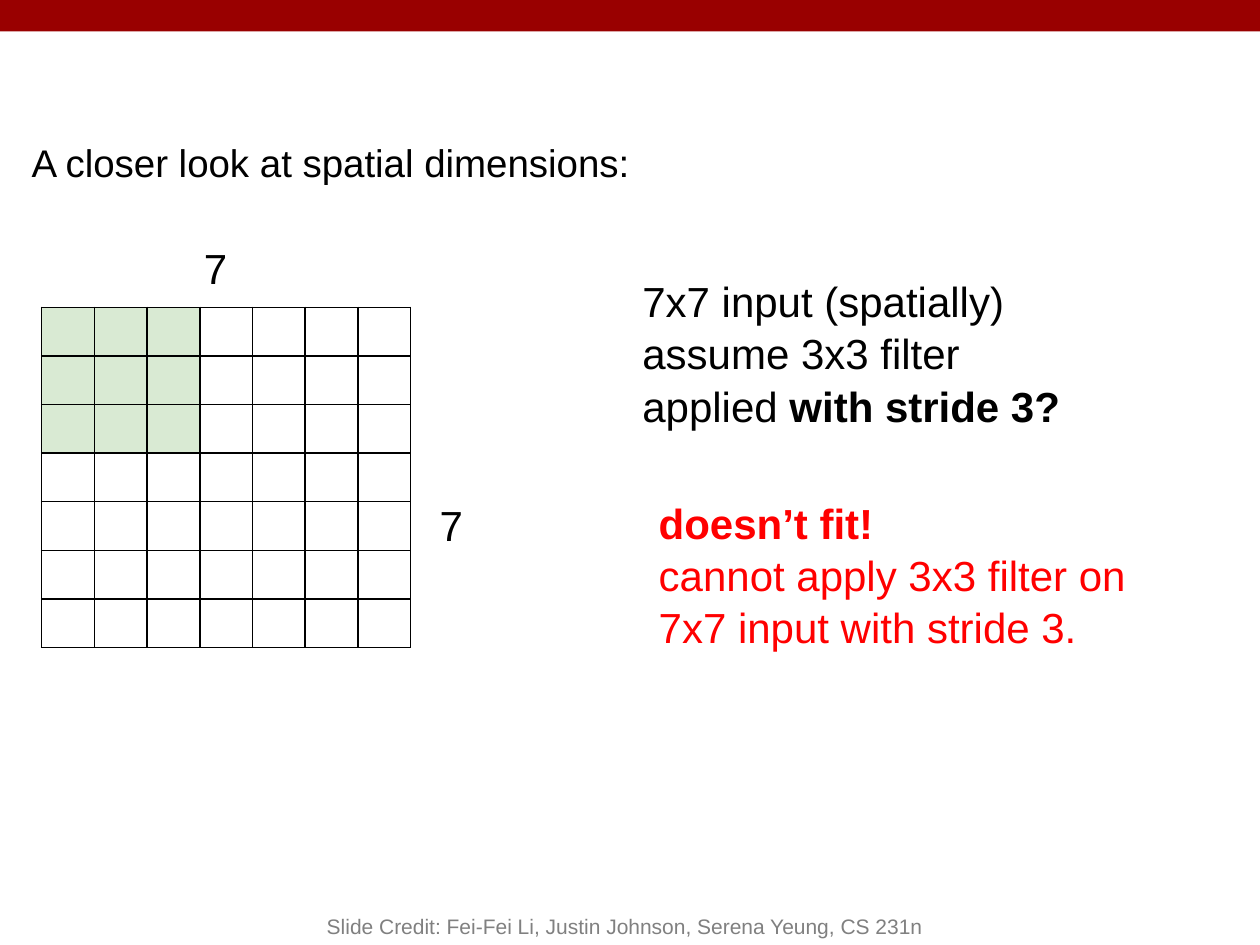
import pptx
import pptx.util
import pptx.oxml
from pptx.dml.color import RGBColor
from pptx.enum.shapes import MSO_SHAPE
from pptx.enum.text import MSO_ANCHOR, MSO_AUTO_SIZE, PP_ALIGN
from pptx.oxml.ns import nsdecls
from pptx.util import Inches, Pt

BLACK = RGBColor(0, 0, 0)
WHITE = RGBColor(255, 255, 255)
RED = RGBColor(255, 0, 0)
GRAY = RGBColor(0x80, 0x80, 0x80)
BAR_RED = RGBColor(0x99, 0, 0)
GREEN = RGBColor(0xD9, 0xEA, 0xD3)

TITLE = "A closer look at spatial dimensions:"
CREDIT = "Slide Credit: Fei-Fei Li, Justin Johnson, Serena Yeung, CS 231n"
INPUT_SIZE = 7
FILTER_SIZE = 3
GRID = (0.33, 2.44, 2.93, 2.7)

# box, colour, paragraphs of (text, bold) runs
TEXTS = [
    ((5, 2.07, 5, 2.01), BLACK, [
        [("7x7 input (spatially)", False)],
        [("assume 3x3 filter", False)],
        [("applied ", False), ("with stride 3?", True)],
    ]),
    ((1.52, 1.81, 0.6, 0.5), BLACK, [[("7", False)]]),
    ((3.39, 3.85, 0.64, 0.5), BLACK, [[("7", False)]]),
    ((5.13, 3.83, 4.34, 1.33), RED, [
        [("doesn’t fit!", True)],
        [("cannot apply 3x3 filter on 7x7 input with stride 3.", False)],
    ]),
]


def set_font(p, size, color):
    p.font.name = "Arial"
    p.font.size = Pt(size)
    p.font.color.rgb = color


def set_frame(tf, anchor=MSO_ANCHOR.TOP):
    tf.word_wrap = True
    tf.auto_size = MSO_AUTO_SIZE.NONE
    tf.vertical_anchor = anchor
    tf.margin_left = tf.margin_right = Inches(0.1)
    tf.margin_top = tf.margin_bottom = Inches(0.1)


def add_text(s, box, color, paragraphs, size=24):
    sp = s.shapes.add_textbox(*map(Inches, box))
    tf = sp.text_frame
    set_frame(tf)
    for i, runs in enumerate(paragraphs):
        p = tf.paragraphs[0] if i == 0 else tf.add_paragraph()
        p.line_spacing = 1.04
        set_font(p, size, color)
        for text, bold in runs:
            r = p.add_run()
            r.text = text
            r.font.bold = bold
    return sp


def add_borders(cell):
    tcPr = cell._tc.get_or_add_tcPr()
    for i, side in enumerate(("lnL", "lnR", "lnT", "lnB")):
        tcPr.insert(i, pptx.oxml.parse_xml(
            f'<a:{side} {nsdecls("a")} w="{Pt(1)}"><a:solidFill>'
            f'<a:srgbClr val="{BLACK}"/></a:solidFill></a:{side}>'))


def add_grid(s):
    """Square input grid with the filter's first position shaded."""
    table = s.shapes.add_table(INPUT_SIZE, INPUT_SIZE, *map(Inches, GRID)).table
    table.first_row = table.horz_banding = False
    for r in range(INPUT_SIZE):
        for c in range(INPUT_SIZE):
            cell = table.cell(r, c)
            cell.margin_top = cell.margin_bottom = 0
            cell.fill.solid()
            in_filter = max(r, c) < FILTER_SIZE
            cell.fill.fore_color.rgb = GREEN if in_filter else WHITE
            add_borders(cell)


def main():
    prs = pptx.Presentation()
    prs.slide_width, prs.slide_height = Inches(10), Inches(7.5)
    s = prs.slides.add_slide(prs.slide_layouts[5])

    bar = s.shapes.add_shape(MSO_SHAPE.RECTANGLE, 0, 0, prs.slide_width, Inches(0.25))
    bar.shadow.inherit = False
    bar.fill.solid()
    bar.fill.fore_color.rgb = BAR_RED
    bar.line.fill.background()

    title = s.shapes.title
    title.left, title.top, title.width, title.height = map(Inches, (0.15, 1, 9.16, 0.66))
    title.text = TITLE
    set_frame(title.text_frame)
    p = title.text_frame.paragraphs[0]
    p.alignment = PP_ALIGN.LEFT
    set_font(p, 22, BLACK)

    for box, color, paragraphs in TEXTS:
        add_text(s, box, color, paragraphs)
    add_grid(s)

    credit = add_text(s, (2, 7, 5.92, 0.5), GRAY, [[(CREDIT, False)]], 12)
    tf = credit.text_frame
    tf.vertical_anchor = MSO_ANCHOR.BOTTOM
    tf.margin_bottom = Inches(0.05)
    tf.paragraphs[0].alignment = PP_ALIGN.CENTER

    prs.save("out.pptx")


if __name__ == "__main__":
    main()
